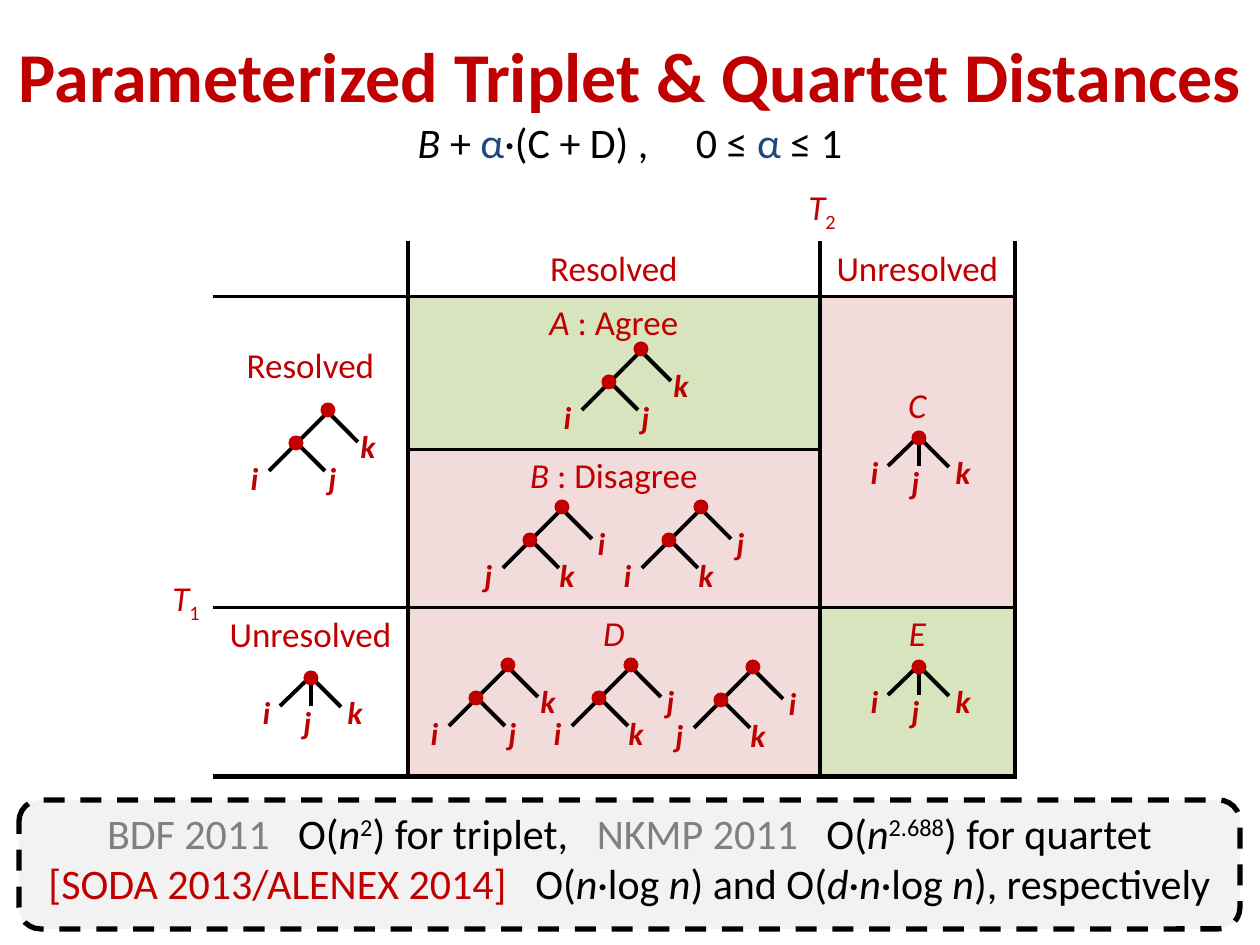
from dataclasses import dataclass, field
from typing import Optional

from lxml import etree
from pptx import Presentation
from pptx import util as u
from pptx.dml import color as dml_color
from pptx.enum import dml, shapes, text
from pptx.oxml import ns

PX_PER_INCH = 126
COLORS = {"red": "C00000", "black": "000000", "blue": "1F497D", "gray": "808080",
          "panel": "F2F2F2", "green": "D7E4BD", "pink": "F2DCDB"}
NO_STYLE_NO_GRID = "{2D5ABB26-0587-4C30-8999-92F81FD0307C}"
THIN, THICK = 2.25, 3


@dataclass
class Run:
    text: str
    color: str = "black"
    italic: bool = False
    bold: bool = False
    size: int = 24
    baseline: int = 0  # percent, negative for subscript
    spacing: float = 0  # points added after each character


@dataclass
class TableCell:
    row: int
    column: int
    runs: list = field(default_factory=list)
    fill: Optional[str] = None
    merge_to: Optional[tuple] = None
    line_spacing: Optional[int] = None
    format: dict = field(default_factory=dict)


@dataclass
class Tree:
    x: int  # centre of the root dot
    y: int
    labels: str


@dataclass
class TreeKind:
    edges: list
    dots: list
    label_offsets: list


RESOLVED = TreeKind(
    edges=[((-32, 32), (-3, 61)), ((0, 2), (30, 32)), ((-30, 32), (0, 2)), ((-59, 61), (-30, 32))],
    dots=[(-32, 33), (0, 0)],
    label_offsets=[(-93, 43), (-15, 43), (20, 11)])
UNRESOLVED = TreeKind(
    edges=[((0, -1), (30, 29)), ((0, 28), (0, 1)), ((-31, 28), (-1, -1))],
    dots=[(0, 0)],
    label_offsets=[(-64, 9), (-23, 19), (24, 9)])

RESOLVED_TREES = [Tree(328, 410, "ijk"), Tree(641, 349, "ijk"), Tree(562, 507, "jki"),
                  Tree(701, 507, "ikj"), Tree(508, 665, "ijk"), Tree(631, 665, "ikj"),
                  Tree(753, 667, "jki")]
UNRESOLVED_TREES = [Tree(311, 678, "ijk"), Tree(919, 667, "ijk"), Tree(919, 438, "ijk")]


def px(value: float) -> int:
    return u.Emu(round(value * u.Inches(1) / PX_PER_INCH))


def rgb(name: str) -> dml_color.RGBColor:
    return dml_color.RGBColor.from_string(COLORS[name])


def set_attributes(target, values: dict) -> None:
    for name, value in values.items():
        setattr(target, name, value)


def write_paragraph(paragraph, runs: list, **formats) -> None:
    set_attributes(paragraph, {"alignment": text.PP_ALIGN.CENTER, **formats})
    for item in runs:
        run = paragraph.add_run()
        run.text = item.text
        set_attributes(run.font, {"name": "Calibri", "size": u.Pt(item.size),
                                  "bold": item.bold, "italic": item.italic})
        run.font.color.rgb = rgb(item.color)
        properties = run._r.get_or_add_rPr()
        if item.baseline:
            properties.set("baseline", str(item.baseline * 1000))
        if item.spacing:
            properties.set("spc", str(round(item.spacing * 100)))


def cell_text(value: str, italic: bool = False, baseline: int = 0) -> Run:
    return Run(value, "red", italic, size=20, baseline=baseline)


def gap(spacing: float = 10.85) -> Run:
    return Run(" ", spacing=spacing)


def n() -> Run:
    return Run("n", italic=True)


def add_border(cell, side: str, width: float) -> None:
    line = etree.SubElement(cell._tc.get_or_add_tcPr(), ns.qn(f"a:ln{side}"), w=str(u.Pt(width)))
    fill = etree.SubElement(line, ns.qn("a:solidFill"))
    etree.SubElement(fill, ns.qn("a:srgbClr"), val=COLORS["black"])


def draw_borders(table) -> None:
    """Rule every cell below the first row and right of the first column."""
    last_row, last_column = len(table.rows) - 1, len(table.columns) - 1
    for row in range(1, last_row + 1):
        for column in range(1, last_column + 1):
            cell = table.cell(row, column)
            if column > 1:
                add_border(cell, "L", THIN)
            add_border(cell, "R", THICK if column == last_column else THIN)
            if row > 1 and not cell.is_spanned:
                add_border(cell, "T", THIN)
            add_border(cell, "B", THICK if row == last_row else THIN)


def draw_table(slide, cells: list) -> None:
    widths, heights = [54, 195, 412, 195], [39, 55, 153, 158, 169]
    frame = slide.shapes.add_table(len(heights), len(widths), px(159), px(181),
                                   px(sum(widths)), px(590))
    table = frame.table
    set_attributes(table, {"first_row": False, "horz_banding": False})
    table._tbl.tblPr.find(ns.qn("a:tableStyleId")).text = NO_STYLE_NO_GRID
    for column, width in zip(table.columns, widths):
        column.width = px(width)
    for row, height in zip(table.rows, heights):
        row.height = px(height)
    frame.height = px(590)
    for item in cells:
        if item.merge_to:
            table.cell(item.row, item.column).merge(table.cell(*item.merge_to))
    draw_borders(table)
    for cell in table.iter_cells():
        cell.fill.background()
    for item in cells:
        cell = table.cell(item.row, item.column)
        set_attributes(cell, item.format)
        if item.fill:
            cell.fill.solid()
            cell.fill.fore_color.rgb = rgb(item.fill)
        spacing = u.Pt(item.line_spacing) if item.line_spacing else None
        write_paragraph(cell.text_frame.paragraphs[0], item.runs, line_spacing=spacing)


def draw_tree(slide, tree: Tree, kind: TreeKind) -> None:
    group = slide.shapes.add_group_shape()
    for (x1, y1), (x2, y2) in kind.edges:
        edge = group.shapes.add_connector(shapes.MSO_CONNECTOR.STRAIGHT, px(tree.x + x1),
                                          px(tree.y + y1), px(tree.x + x2), px(tree.y + y2))
        edge.line.color.rgb = rgb("black")
        edge.line.width = u.Pt(THIN)
        etree.SubElement(edge._element.spPr, ns.qn("a:effectLst"))
    for letter, (dx, dy) in zip(tree.labels, kind.label_offsets):
        label = group.shapes.add_textbox(px(tree.x + dx), px(tree.y + dy), px(39), px(50))
        set_attributes(label.text_frame, {"word_wrap": False,
                                          "auto_size": text.MSO_AUTO_SIZE.SHAPE_TO_FIT_TEXT})
        write_paragraph(label.text_frame.paragraphs[0], [Run(letter, "red", True, True, 18)])
    for dx, dy in kind.dots:
        dot = group.shapes.add_shape(shapes.MSO_SHAPE.OVAL, px(tree.x + dx - 7.5),
                                     px(tree.y + dy - 7.5), px(15), px(15))
        dot.shadow.inherit = False
        dot.fill.solid()
        dot.fill.fore_color.rgb = rgb("red")
        dot.line.fill.background()


def draw_title(slide) -> None:
    title = slide.shapes.title
    set_attributes(title, {"left": 0, "top": px(26), "width": px(1260), "height": px(149)})
    frame = title.text_frame
    set_attributes(frame, {"word_wrap": True, "vertical_anchor": text.MSO_ANCHOR.TOP,
                           "auto_size": text.MSO_AUTO_SIZE.NONE})
    write_paragraph(frame.paragraphs[0], [
        Run("Parameterized Triplet & Quartet Distances", "red", bold=True, size=40)])
    write_paragraph(frame.add_paragraph(), [
        Run("B ", italic=True), Run("+ "), Run("α", "blue"), Run("·(C + D) ,"), gap(21.7),
        Run("0 ≤ "), Run("α", "blue"), Run(" ≤ 1")], space_after=u.Pt(12))


def draw_results(slide) -> None:
    panel = slide.shapes.add_shape(shapes.MSO_SHAPE.ROUNDED_RECTANGLE,
                                   px(19), px(800), px(1221), px(129))
    panel.shadow.inherit = False
    panel.fill.solid()
    panel.fill.fore_color.rgb = rgb("panel")
    panel.line.color.rgb = rgb("black")
    set_attributes(panel.line, {"width": u.Pt(3), "dash_style": dml.MSO_LINE.DASH})
    frame = slide.shapes.add_textbox(px(19), px(801), px(1221), px(115)).text_frame
    frame.word_wrap = True
    write_paragraph(frame.paragraphs[0], [
        Run("BDF 2011", "gray"), gap(), Run("O("), n(), Run("2", baseline=30),
        Run(") for triplet,"), gap(), Run("NKMP 2011", "gray"), gap(), Run("O("), n(),
        Run("2.688", baseline=30), Run(") for quartet")])
    write_paragraph(frame.add_paragraph(), [
        Run("[SODA 2013/ALENEX 2014]", "red"), gap(), Run("O("), n(), Run("·log "), n(),
        Run(") and O("), Run("d", italic=True), Run("·"), n(), Run("·log "), n(),
        Run("), respectively")])


def main() -> None:
    presentation = Presentation()
    set_attributes(presentation, {"slide_width": px(1260), "slide_height": px(945)})
    slide = presentation.slides.add_slide(presentation.slide_layouts[5])
    draw_title(slide)
    draw_results(slide)
    draw_table(slide, [
        TableCell(0, 2, [cell_text("T", True), cell_text("2", baseline=-25)], merge_to=(0, 3),
                  format={"margin_left": px(234)}),
        TableCell(1, 2, [cell_text("Resolved")]),
        TableCell(1, 3, [cell_text("Unresolved")]),
        TableCell(2, 0, [cell_text("T", True), cell_text("1", baseline=-25)], merge_to=(4, 0),
                  format={"margin_top": px(138), "vertical_anchor": text.MSO_ANCHOR.MIDDLE}),
        TableCell(2, 1, [cell_text("Resolved")], merge_to=(3, 1), format={"margin_top": px(49)}),
        TableCell(2, 2, [cell_text("A", True), cell_text(" : Agree")], "green", line_spacing=24),
        TableCell(2, 3, [cell_text("C", True)], "pink", (3, 3), 24, {"margin_top": px(90)}),
        TableCell(3, 2, [cell_text("B ", True), cell_text(": Disagree")], "pink", line_spacing=24),
        TableCell(4, 1, [cell_text("Unresolved")]),
        TableCell(4, 2, [cell_text("D", True)], "pink", line_spacing=24),
        TableCell(4, 3, [cell_text("E", True)], "green", line_spacing=24)])
    for trees, kind in ((RESOLVED_TREES, RESOLVED), (UNRESOLVED_TREES, UNRESOLVED)):
        for tree in trees:
            draw_tree(slide, tree, kind)
    presentation.save("out.pptx")


if __name__ == "__main__":
    main()
